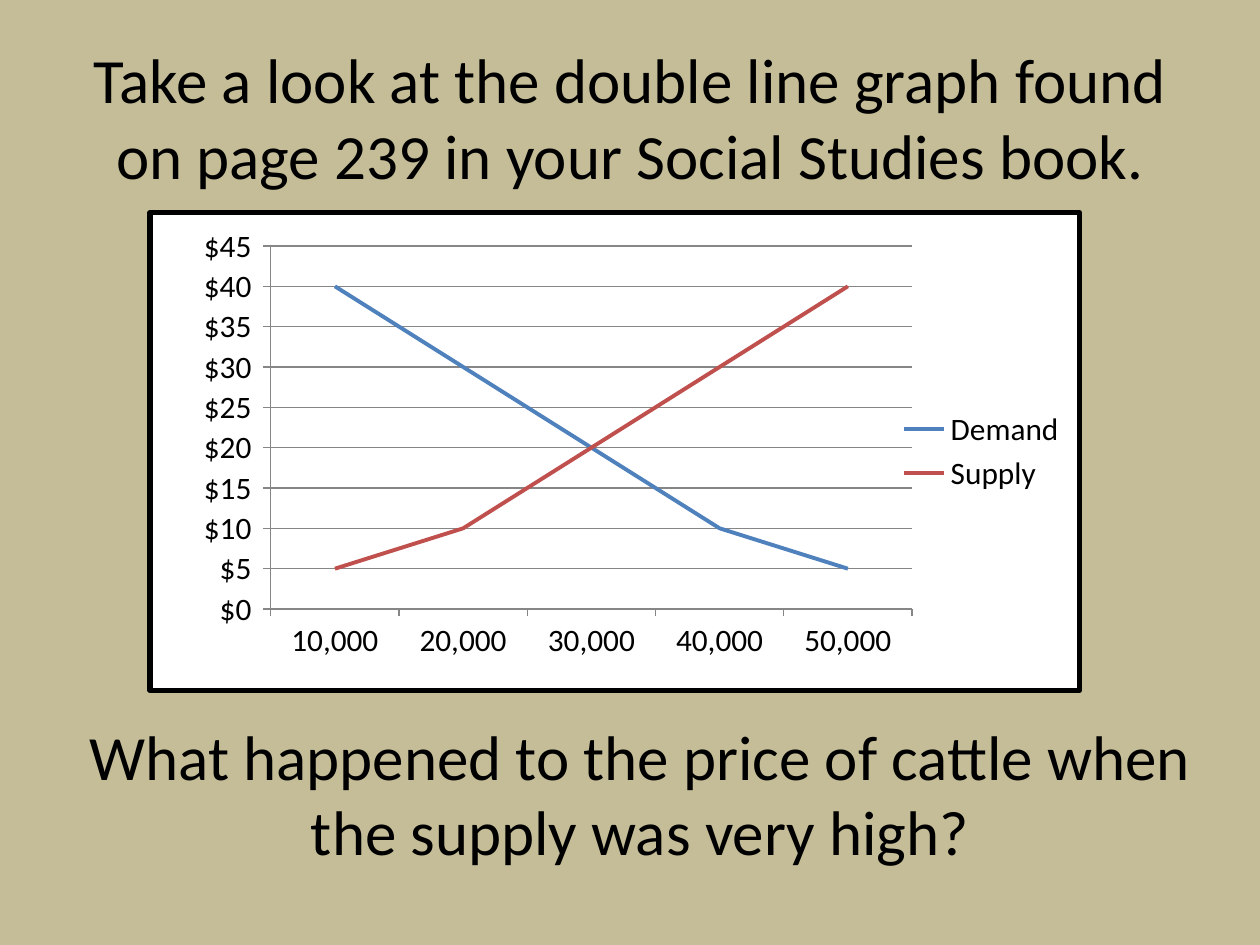
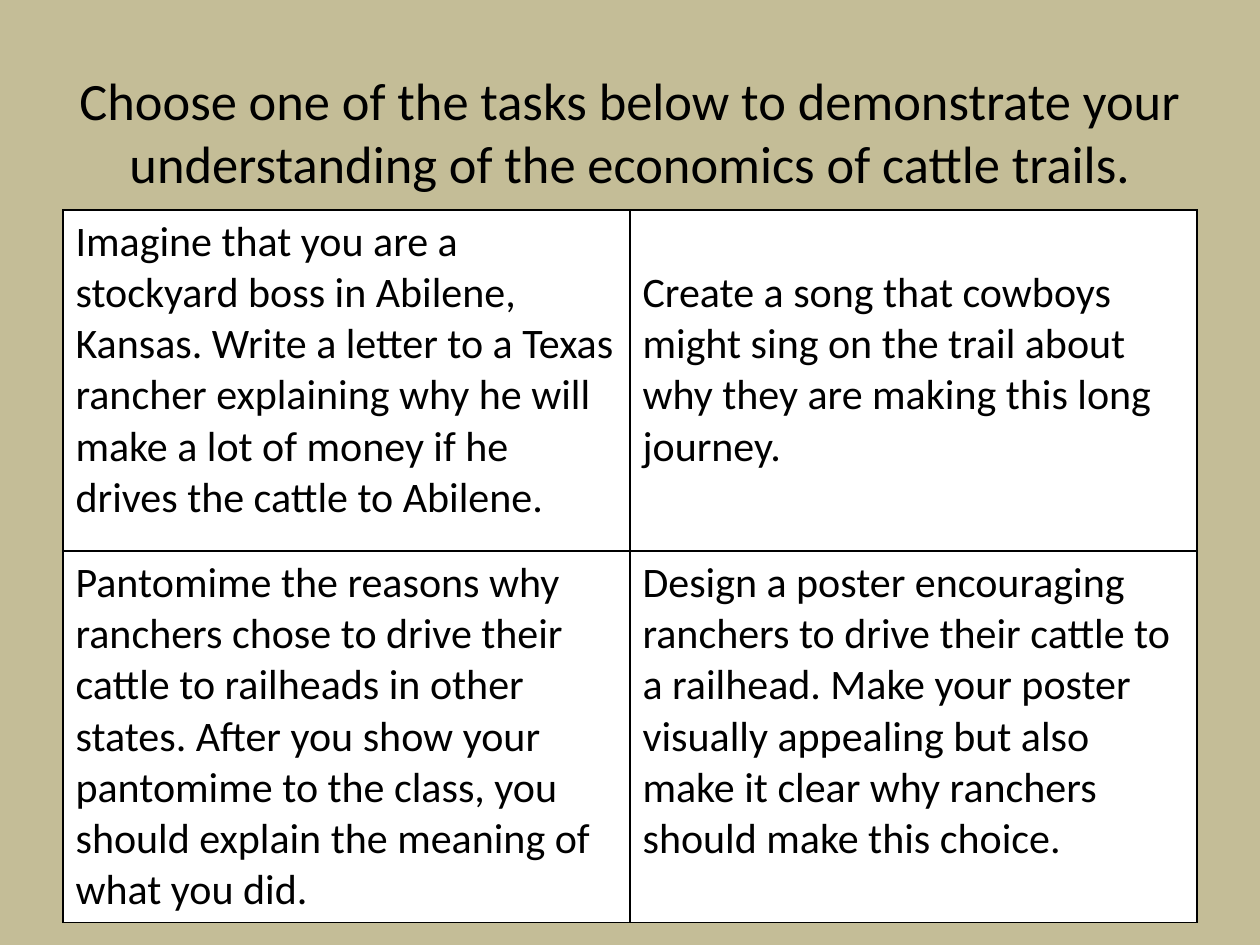
from dataclasses import dataclass

from lxml.etree import SubElement
from pptx import Presentation
from pptx.chart.chart import Chart
from pptx.chart.data import CategoryChartData
from pptx.dml.color import RGBColor
from pptx.enum.chart import XL_CHART_TYPE, XL_LEGEND_POSITION, XL_TICK_MARK
from pptx.enum.text import MSO_ANCHOR, MSO_AUTO_SIZE, PP_ALIGN
from pptx.oxml import parse_xml
from pptx.oxml.ns import nsdecls, qn
from pptx.shapes.autoshape import Shape
from pptx.slide import Slide
from pptx.table import _Cell
from pptx.text.text import Font, _Paragraph
from pptx.util import Pt

FONT = "Calibri"
SAND = RGBColor(0xC4, 0xBD, 0x97)
BLACK = RGBColor(0x00, 0x00, 0x00)
WHITE = RGBColor(0xFF, 0xFF, 0xFF)
GRAY = RGBColor(0x86, 0x86, 0x86)
BLUE = RGBColor(0x4F, 0x81, 0xBD)
RED = RGBColor(0xC0, 0x50, 0x4D)
DOLLARS = '"$"#,##0_);[Red]\\("$"#,##0\\)'
TITLE_ONLY = 5
CELL_MARGIN = 3.6
TASK_LINE = 29.3


@dataclass(frozen=True)
class Frame:
    left: float
    top: float
    width: float
    height: float


@dataclass(frozen=True)
class Curve:
    name: str
    prices: tuple[int, ...]
    color: RGBColor


@dataclass(frozen=True)
class Task:
    text: str
    lines_above: int = 0


HEAD_COUNTS = (10000, 20000, 30000, 40000, 50000)
CURVES = (
    Curve("Demand", (40, 30, 20, 10, 5), BLUE),
    Curve("Supply", (5, 10, 20, 30, 40), RED),
)
TASKS = (
    (
        Task("Imagine that you are a stockyard boss in Abilene, Kansas. Write a letter to a Texas "
             "rancher explaining why he will make a lot of money if he drives the cattle to Abilene."),
        Task("Create a song that cowboys might sing on the trail about why they are making "
             "this long journey.", lines_above=1),
    ),
    (
        Task("Pantomime the reasons why ranchers chose to drive their cattle to railheads in other "
             "states. After you show your pantomime to the class, you should explain the meaning of "
             "what you did."),
        Task("Design a poster encouraging ranchers to drive their cattle to a railhead. Make your "
             "poster visually appealing but also make it clear why ranchers should make this choice."),
    ),
)


def style_font(font: Font, size: float) -> None:
    font.name = FONT
    font.size = Pt(size)
    font.color.rgb = BLACK


def add_span(para: _Paragraph, text: str, size: float) -> None:
    span = para.add_run()
    span.text = text
    style_font(span.font, size)


def fill_heading(box: Shape, frame: Frame, text: str, size: float) -> None:
    box.left, box.top = Pt(frame.left), Pt(frame.top)
    box.width, box.height = Pt(frame.width), Pt(frame.height)
    text_frame = box.text_frame
    text_frame.word_wrap = True
    text_frame.auto_size = MSO_AUTO_SIZE.NONE
    text_frame.vertical_anchor = MSO_ANCHOR.MIDDLE
    para = text_frame.paragraphs[0]
    para.alignment = PP_ALIGN.CENTER
    add_span(para, text, size)


def frame_chart(chart: Chart, border: float) -> None:
    chart_area = parse_xml(
        f'<c:spPr {nsdecls("c", "a")}>'
        f'<a:solidFill><a:srgbClr val="{WHITE}"/></a:solidFill>'
        f'<a:ln w="{Pt(border)}"><a:solidFill><a:srgbClr val="{BLACK}"/></a:solidFill></a:ln>'
        "</c:spPr>"
    )
    chart.element.find(qn("c:chart")).addnext(chart_area)


def place_plot(chart: Chart, plot: Frame) -> None:
    plot_area = chart.element.find(qn("c:chart")).find(qn("c:plotArea"))
    for old_layout in plot_area.findall(qn("c:layout")):
        plot_area.remove(old_layout)
    layout = parse_xml(f'<c:layout {nsdecls("c")}/>')
    manual = SubElement(layout, qn("c:manualLayout"))
    settings = {
        "layoutTarget": "inner", "xMode": "edge", "yMode": "edge",
        "x": plot.left, "y": plot.top, "w": plot.width, "h": plot.height,
    }
    for tag, value in settings.items():
        SubElement(manual, qn(f"c:{tag}")).set("val", str(value))
    plot_area.insert(0, layout)


def add_price_chart(page: Slide, frame: Frame) -> None:
    data = CategoryChartData(number_format=DOLLARS)
    data.categories = HEAD_COUNTS
    data.categories.number_format = "#,##0"
    for curve in CURVES:
        data.add_series(curve.name, curve.prices)
    chart = page.shapes.add_chart(
        XL_CHART_TYPE.LINE, Pt(frame.left), Pt(frame.top), Pt(frame.width), Pt(frame.height), data
    ).chart
    style_font(chart.font, 18)
    chart.has_title = False
    chart.has_legend = True
    chart.legend.position = XL_LEGEND_POSITION.RIGHT
    chart.legend.include_in_layout = False

    chart.plots[0].vary_by_categories = False
    for series, curve in zip(chart.plots[0].series, CURVES):
        series.smooth = False
        series.format.line.color.rgb = curve.color
        series.format.line.width = Pt(2.25)

    prices = chart.value_axis
    prices.minimum_scale, prices.maximum_scale, prices.major_unit = 0, 45, 5
    prices.has_major_gridlines = True
    for axis, number_format in ((chart.category_axis, "#,##0"), (prices, DOLLARS)):
        axis.major_tick_mark = XL_TICK_MARK.OUTSIDE
        axis.minor_tick_mark = XL_TICK_MARK.NONE
        axis.tick_labels.number_format = number_format
        axis.tick_labels.number_format_is_linked = False
    for line in (chart.category_axis.format.line, prices.format.line, prices.major_gridlines.format.line):
        line.color.rgb = GRAY
        line.width = Pt(0.75)

    place_plot(chart, Frame(0.13, 0.07, 0.69, 0.76))
    frame_chart(chart, 3)


def border_cell(cell: _Cell, width: float) -> None:
    properties = cell._tc.get_or_add_tcPr()
    for position, side in enumerate(("lnL", "lnR", "lnT", "lnB")):
        properties.insert(position, parse_xml(
            f'<a:{side} {nsdecls("a")} w="{Pt(width)}">'
            f'<a:solidFill><a:srgbClr val="{BLACK}"/></a:solidFill></a:{side}>'
        ))


def add_task_table(page: Slide, frame: Frame) -> None:
    table = page.shapes.add_table(
        len(TASKS), len(TASKS[0]), Pt(frame.left), Pt(frame.top), Pt(frame.width), Pt(frame.height)
    ).table
    table.first_row = False
    table.horz_banding = False
    for row_index, row in enumerate(TASKS):
        for column_index, task in enumerate(row):
            cell = table.cell(row_index, column_index)
            cell.fill.solid()
            cell.fill.fore_color.rgb = WHITE
            cell.margin_top = Pt(CELL_MARGIN + task.lines_above * TASK_LINE)
            border_cell(cell, 1)
            add_span(cell.text_frame.paragraphs[0], task.text, 24)


def add_page(deck: Presentation, title: str, title_frame: Frame, title_size: float) -> Slide:
    page = deck.slides.add_slide(deck.slide_layouts[TITLE_ONLY])
    fill_heading(page.shapes.title, title_frame, title, title_size)
    return page


def main() -> None:
    deck = Presentation()
    deck.slide_width, deck.slide_height = Pt(720), Pt(540)
    background = deck.slide_master.background.fill
    background.solid()
    background.fore_color.rgb = SAND

    graph_page = add_page(
        deck, "Take a look at the double line graph found on page 239 in your Social Studies book.",
        Frame(36, 21.6, 648, 90), 36,
    )
    add_price_chart(graph_page, Frame(84.24, 120, 534, 276))
    question = graph_page.shapes.add_textbox(0, 0, 0, 0)
    fill_heading(
        question, Frame(41.76, 408, 648, 90),
        "What happened to the price of cattle when the supply was very high?", 36,
    )

    task_page = add_page(
        deck, "Choose one of the tasks below to demonstrate your understanding of the economics "
        "of cattle trails.", Frame(36, 30, 648, 90), 30,
    )
    add_task_table(task_page, Frame(36, 120, 648, 390))
    deck.save("out.pptx")


if __name__ == "__main__":
    main()
